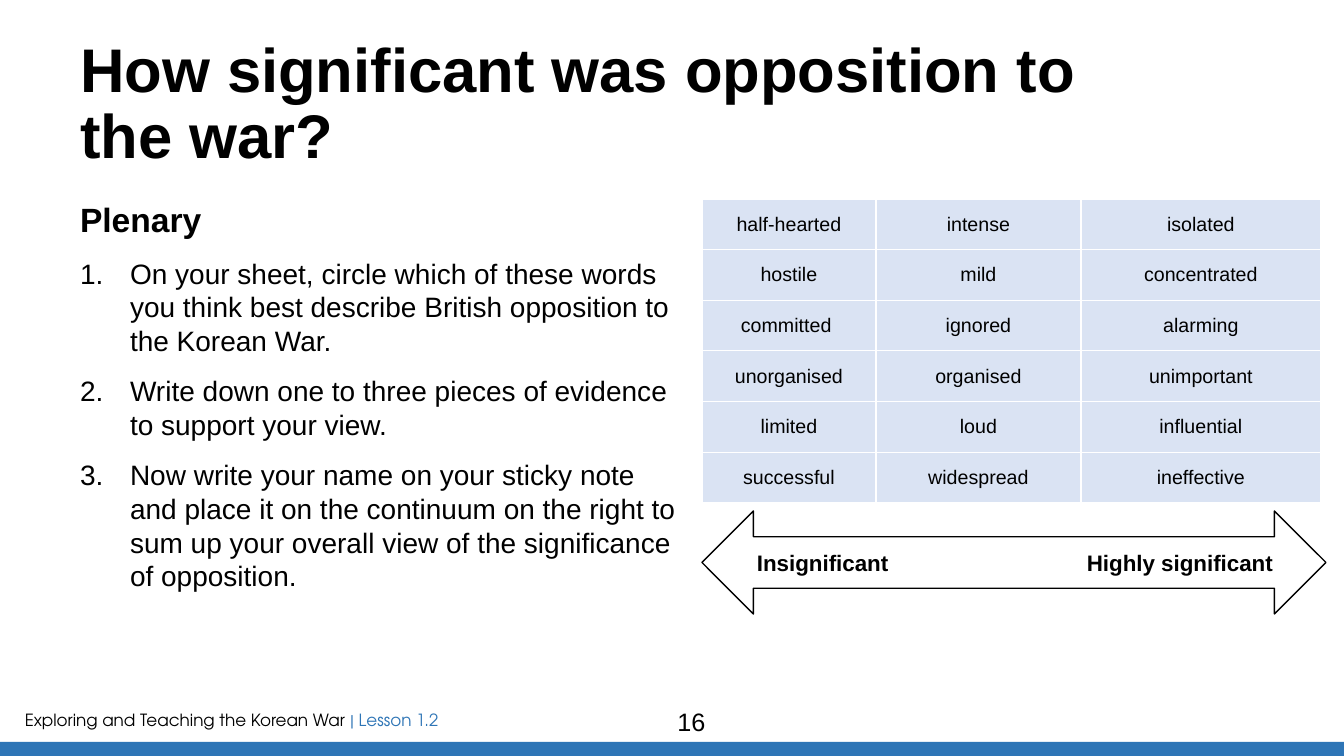
"""Build the plenary slide on how significant opposition to the Korean War was."""
import pptx
import pptx.util
import pptx.dml.color
import pptx.enum.shapes
import pptx.enum.text
from lxml import etree

TITLE = "How significant was opposition to\vthe war?"
HEADING = "Plenary"
TASKS = [
    "On your sheet, circle which of these words you think best describe British opposition to the Korean War.",
    "Write down one to three pieces of evidence to support your view.",
    "Now write your name on your sticky note and place it on the continuum on the right to sum up "
    "your overall view of the significance of opposition.",
]
WORDS = [
    ("half-hearted", "intense", "isolated"),
    ("hostile", "mild", "concentrated"),
    ("committed ", "ignored", "alarming"),
    ("unorganised", "organised", "unimportant"),
    ("limited", "loud", "influential"),
    ("successful", "widespread", "ineffective"),
]
WORD_COLUMNS = (174, 205, 240)
COURSE, LESSON = "Exploring and Teaching the Korean War ", "| Lesson 1.2"
PAGE = "16"

COLORS = {"ink": "000000", "paper": "FFFFFF", "accent": "2E75B6", "words": "DAE3F3"}
SLIDE_W, SLIDE_H = 1344, 756
EMU_PER_PX = 914400 / 100.8
LEFT, RIGHT, CONTENT_TOP = 80, 702, 199
WORDS_H = 304
ALIGN = pptx.enum.text.PP_ALIGN
ANCHOR = pptx.enum.text.MSO_ANCHOR
SHAPE = pptx.enum.shapes.MSO_SHAPE


def px(length):
    return pptx.util.Emu(round(length * EMU_PER_PX))


def rgb(name):
    return pptx.dml.color.RGBColor.from_string(COLORS[name])


def style(paragraph, size, bold=False, align=ALIGN.LEFT, face="Arial"):
    paragraph.alignment = align
    for run in paragraph.runs:
        run.font.size = pptx.util.Pt(size)
        run.font.bold = bold
        run.font.name = face
        run.font.color.rgb = rgb("ink")


def fit(placeholder, *box):
    placeholder.left, placeholder.top, placeholder.width, placeholder.height = map(px, box)
    frame = placeholder.text_frame
    frame.margin_left = frame.margin_top = frame.margin_right = frame.margin_bottom = 0
    frame.vertical_anchor = ANCHOR.TOP
    frame.auto_size = pptx.enum.text.MSO_AUTO_SIZE.NONE
    return frame


def add_label(shapes, text, box, size, **look):
    frame = shapes.add_textbox(*map(px, box)).text_frame
    frame.word_wrap = True
    frame.text = text
    style(frame.paragraphs[0], size, **look)
    return frame.paragraphs[0]


def add_block(shapes, preset, box, fill):
    block = shapes.add_shape(preset, *map(px, box))
    block.shadow.inherit = False
    block.fill.solid()
    block.fill.fore_color.rgb = rgb(fill)
    block.line.fill.background()
    return block


def set_marker(paragraph, indent, numbered):
    props = paragraph._p.get_or_add_pPr()
    props.set("marL", str(px(indent)))
    props.set("indent", str(-px(indent)))
    tag = "buAutoNum" if numbered else "buNone"
    marker = etree.SubElement(props, "{http://schemas.openxmlformats.org/drawingml/2006/main}" + tag)
    if numbered:
        marker.set("type", "arabicPeriod")


def add_footer(slide):
    course = add_label(slide.shapes, COURSE, (15, 705, 455, 30), 12, face="TeX Gyre Adventor")
    course.add_run().text = LESSON
    style(course, 12, face="TeX Gyre Adventor")
    course.runs[1].font.color.rgb = rgb("accent")
    add_block(slide.shapes, SHAPE.RECTANGLE, (0, 742, SLIDE_W, 14), "accent")
    add_label(slide.shapes, PAGE, (436, 701, 511, 40), 18, align=ALIGN.CENTER)


def add_tasks(slide):
    frame = fit(slide.placeholders[1], LEFT, CONTENT_TOP, 604, 397)
    frame.text = "\n".join([HEADING] + TASKS)
    for index, paragraph in enumerate(frame.paragraphs):
        numbered = index > 0
        paragraph.line_spacing = 1.0
        paragraph.space_before = pptx.util.Pt(6 if numbered else 0)
        paragraph.space_after = pptx.util.Pt(6)
        set_marker(paragraph, 50 if numbered else 0, numbered)
        style(paragraph, 20 if numbered else 24, bold=not numbered)


def add_words(slide):
    box = (RIGHT, CONTENT_TOP, sum(WORD_COLUMNS), WORDS_H)
    table = slide.shapes.add_table(len(WORDS), len(WORD_COLUMNS), *map(px, box)).table
    table.first_row = table.horz_banding = False
    for column, width in zip(table.columns, WORD_COLUMNS):
        column.width = px(width)
    for r, row in enumerate(WORDS):
        table.rows[r].height = px(WORDS_H / len(WORDS))
        for c, word in enumerate(row):
            cell = table.cell(r, c)
            cell.text = word
            cell.vertical_anchor = ANCHOR.MIDDLE
            cell.fill.solid()
            cell.fill.fore_color.rgb = rgb("words")
            style(cell.text_frame.paragraphs[0], 14, align=ALIGN.CENTER)


def add_continuum(slide):
    continuum = slide.shapes.add_group_shape()
    arrow = add_block(continuum.shapes, SHAPE.LEFT_RIGHT_ARROW, (RIGHT, 511, 624, 103), "paper")
    arrow.line.color.rgb = rgb("ink")
    arrow.line.width = pptx.util.Pt(1)
    add_label(continuum.shapes, "Insignificant", (747, 544, 166, 37), 16, bold=True)
    add_label(continuum.shapes, "Highly significant", (1040, 544, 243, 37), 16, bold=True, align=ALIGN.RIGHT)


def main():
    deck = pptx.Presentation()
    deck.slide_width, deck.slide_height = px(SLIDE_W), px(SLIDE_H)
    slide = deck.slides.add_slide(deck.slide_layouts[1])
    heading = fit(slide.shapes.title, LEFT, 39, 1264, 146)
    heading.text = TITLE
    heading.paragraphs[0].line_spacing = 0.9
    style(heading.paragraphs[0], 44, bold=True)
    add_tasks(slide)
    add_words(slide)
    add_continuum(slide)
    add_footer(slide)
    deck.save("out.pptx")


if __name__ == "__main__":
    main()
